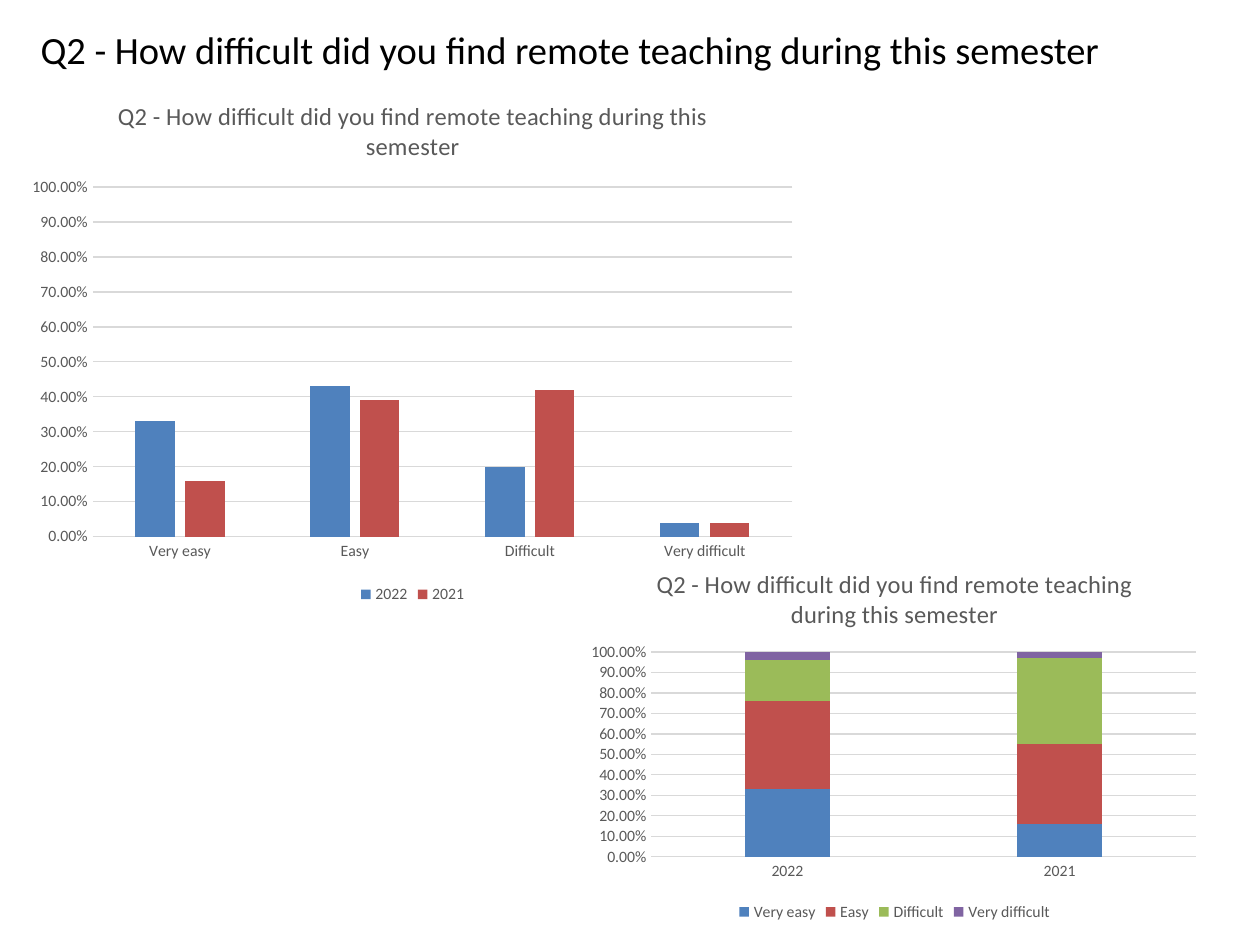
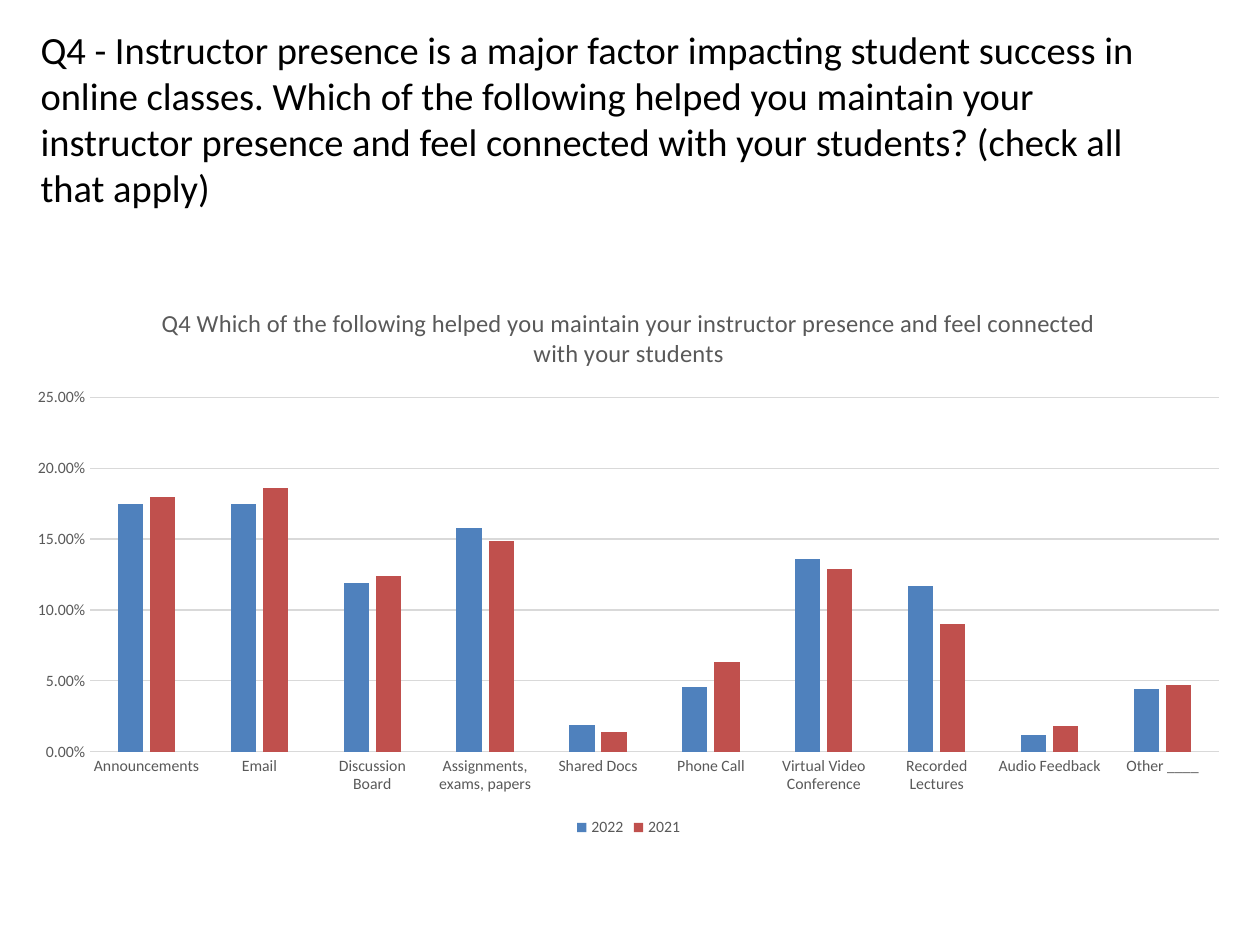
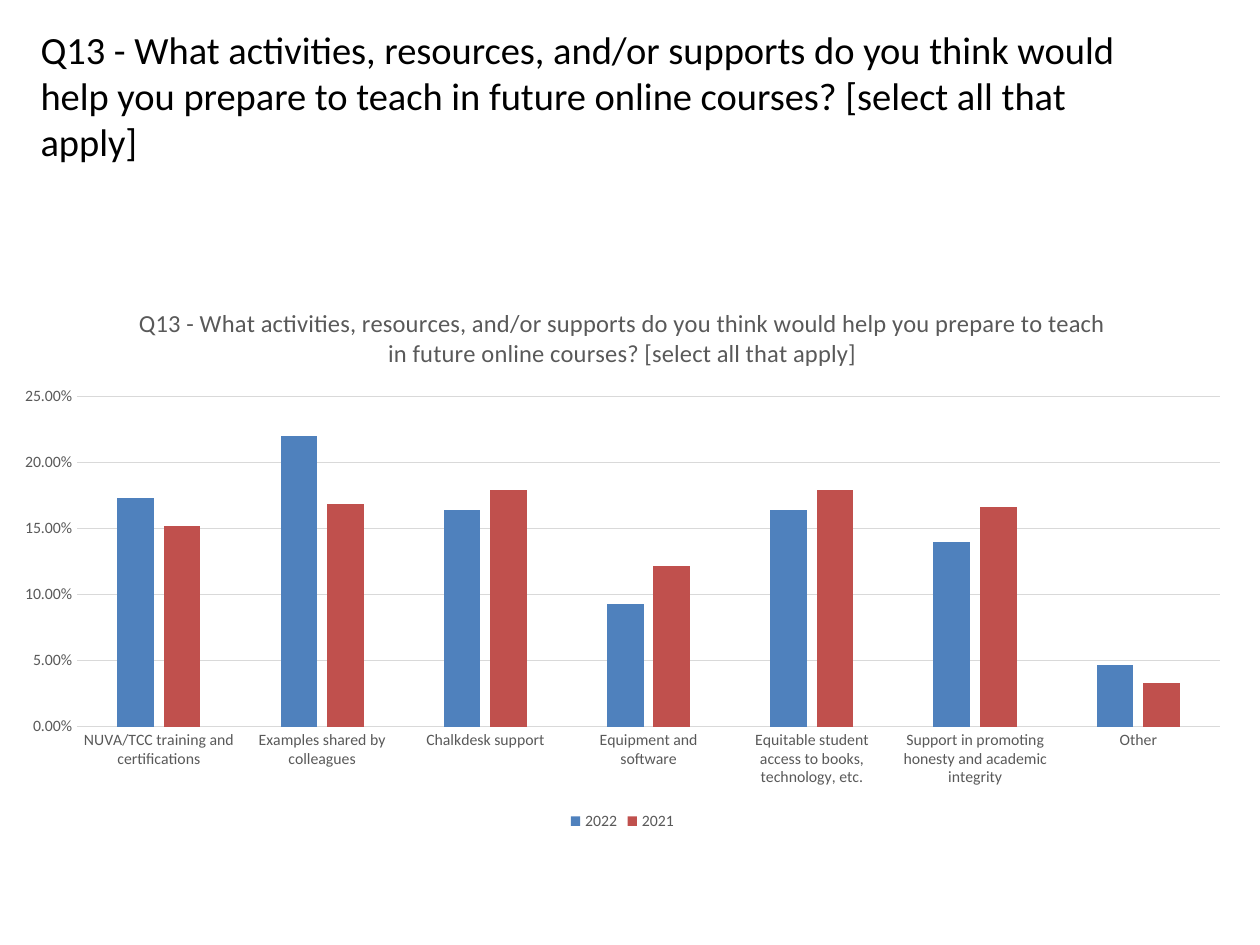
import pptx
import pptx.chart.data
import pptx.dml.color
import pptx.enum.chart
import pptx.enum.text
import pptx.oxml
import pptx.oxml.ns
import pptx.util

Pt = pptx.util.Pt
ChartType = pptx.enum.chart.XL_CHART_TYPE

# Shared style
FONT = "Calibri"
BLACK, GREY, GRID = "000000", "595959", "D9D9D9"
SERIES_COLOURS = ["4F81BD", "C0504D", "9BBB59", "8064A2"]
TITLE_BOX = (16, 11, 648, 29)

# Survey results
DIFFICULTY = "Q2 - How difficult did you find remote teaching during this semester"
DIFFICULTY_LEVELS = ["Very easy", "Easy", "Difficult", "Very difficult"]
DIFFICULTY_RESULTS = {
    "2022": [0.33, 0.43, 0.2, 0.04],
    "2021": [0.16, 0.39, 0.42, 0.04],
}
PRESENCE = (
    "Q4 - Instructor presence is a major factor impacting student success in online classes. "
    "Which of the following helped you maintain your instructor presence and feel connected "
    "with your students? (check all that apply)"
)
PRESENCE_CHART = (
    "Q4 Which of the following helped you maintain your instructor presence "
    "and feel connected with your students"
)
PRESENCE_TOOLS = [
    "Announcements", "Email", "Discussion Board", "Assignments, exams, papers",
    "Shared Docs", "Phone Call", "Virtual Video Conference", "Recorded Lectures",
    "Audio Feedback", "Other ____",
]
PRESENCE_RESULTS = {
    "2022": [0.175, 0.175, 0.119, 0.158, 0.019, 0.046, 0.136, 0.117, 0.012, 0.044],
    "2021": [0.18, 0.186, 0.124, 0.149, 0.014, 0.063, 0.129, 0.09, 0.018, 0.047],
}
SUPPORT = (
    "Q13 - What activities, resources, and/or supports do you think would help you "
    "prepare to teach in future online courses? [select all that apply]"
)
SUPPORT_KINDS = [
    "NUVA/TCC training and certifications", "Examples shared by colleagues",
    "Chalkdesk support", "Equipment and software",
    "Equitable student access to books, technology, etc.",
    "Support in promoting honesty and academic integrity", "Other",
]
SUPPORT_RESULTS = {
    "2022": [0.173, 0.22, 0.164, 0.093, 0.164, 0.14, 0.047],
    "2021": [0.152, 0.169, 0.179, 0.122, 0.179, 0.166, 0.033],
}


def colour(value):
    return pptx.dml.color.RGBColor.from_string(value)


def style_font(font, size, value):
    font.name = FONT
    font.size = Pt(size)
    font.bold = False
    font.color.rgb = colour(value)


def style_line(line, value):
    line.color.rgb = colour(value)
    line.width = Pt(0.75)


def add_question_slide(presentation, question):
    """Add a title-only slide headed by the survey question."""
    slide = presentation.slides.add_slide(presentation.slide_layouts[5])
    title = slide.shapes.title
    title.left, title.top, title.width, title.height = map(Pt, TITLE_BOX)
    text_frame = title.text_frame
    text_frame.text = question
    text_frame.word_wrap = True
    text_frame.auto_size = pptx.enum.text.MSO_AUTO_SIZE.NONE
    text_frame.vertical_anchor = pptx.enum.text.MSO_ANCHOR.TOP
    paragraph = text_frame.paragraphs[0]
    paragraph.alignment = pptx.enum.text.PP_ALIGN.LEFT
    style_font(paragraph.runs[0].font, 22, BLACK)
    return slide


def place_plot(chart, box, plot_box):
    """Fix the inner plot area; plot_box is in points from the chart's corner."""
    width, height = box[2:]
    fractions = [length / side for length, side in zip(plot_box, (width, height) * 2)]
    settings = [("layoutTarget", "inner"), ("xMode", "edge"), ("yMode", "edge")]
    settings += [(name, f"{value:.3f}") for name, value in zip("xywh", fractions)]
    marks = "".join(f'<c:{name} val="{value}"/>' for name, value in settings)
    layout = pptx.oxml.parse_xml(
        f'<c:layout {pptx.oxml.ns.nsdecls("c")}><c:manualLayout>{marks}'
        "</c:manualLayout></c:layout>"
    )
    plot_area = chart.element.xpath("c:chart/c:plotArea")[0]
    for existing in plot_area.xpath("c:layout"):
        plot_area.remove(existing)
    plot_area.insert(0, layout)


def style_axes(chart, maximum, step):
    for axis in (chart.category_axis, chart.value_axis):
        axis.major_tick_mark = pptx.enum.chart.XL_TICK_MARK.NONE
        axis.minor_tick_mark = pptx.enum.chart.XL_TICK_MARK.NONE
        style_font(axis.tick_labels.font, 9, GREY)
    style_line(chart.category_axis.format.line, GRID)
    value_axis = chart.value_axis
    value_axis.format.line.fill.background()
    value_axis.minimum_scale = 0
    value_axis.maximum_scale = maximum
    value_axis.major_unit = step
    value_axis.has_major_gridlines = True
    style_line(value_axis.major_gridlines.format.line, GRID)
    value_axis.tick_labels.number_format = "0.00%"
    value_axis.tick_labels.number_format_is_linked = False


def add_column_chart(slide, box, plot_box, heading, categories, results,
                     maximum, step, chart_type=ChartType.COLUMN_CLUSTERED):
    data = pptx.chart.data.CategoryChartData(number_format="0.00%")
    data.categories = categories
    for name, values in results.items():
        data.add_series(name, values)
    chart = slide.shapes.add_chart(chart_type, *map(Pt, box), data).chart
    style_font(chart.font, 10, BLACK)

    # Heading and legend
    chart.has_title = True
    text_frame = chart.chart_title.text_frame
    text_frame.text = heading
    style_font(text_frame.paragraphs[0].runs[0].font, 14, GREY)
    chart.has_legend = True
    chart.legend.position = pptx.enum.chart.XL_LEGEND_POSITION.BOTTOM
    chart.legend.include_in_layout = False
    style_font(chart.legend.font, 9, GREY)

    # Columns
    plot = chart.plots[0]
    plot.gap_width = 219
    plot.overlap = 100 if chart_type == ChartType.COLUMN_STACKED else -27
    plot.vary_by_categories = False
    for series, value in zip(plot.series, SERIES_COLOURS):
        series.format.fill.solid()
        series.format.fill.fore_color.rgb = colour(value)

    style_axes(chart, maximum, step)
    place_plot(chart, box, plot_box)


def build_difficulty_slide(presentation):
    slide = add_question_slide(presentation, DIFFICULTY)
    add_column_chart(slide, (9.4, 44, 452.9, 303.8), (43.5, 63, 400, 200),
                     DIFFICULTY, DIFFICULTY_LEVELS, DIFFICULTY_RESULTS, 1, 0.1)
    # The same results, stacked by year
    by_level = dict(zip(DIFFICULTY_LEVELS, zip(*DIFFICULTY_RESULTS.values())))
    add_column_chart(slide, (331.2, 313.2, 360, 216), (41, 59.5, 311, 117),
                     DIFFICULTY, list(DIFFICULTY_RESULTS), by_level, 1, 0.1,
                     ChartType.COLUMN_STACKED)


def build_presence_slide(presentation):
    slide = add_question_slide(presentation, PRESENCE)
    add_column_chart(slide, (7.9, 162, 702.7, 319), (43.5, 65, 645, 202.5),
                     PRESENCE_CHART, PRESENCE_TOOLS, PRESENCE_RESULTS, 0.25, 0.05)


def build_support_slide(presentation):
    slide = add_question_slide(presentation, SUPPORT)
    add_column_chart(slide, (0, 162, 711.4, 315.4), (44, 64.5, 653, 188.5),
                     SUPPORT, SUPPORT_KINDS, SUPPORT_RESULTS, 0.25, 0.05)


def main():
    presentation = pptx.Presentation()
    presentation.slide_width = Pt(720)
    presentation.slide_height = Pt(540)
    build_difficulty_slide(presentation)
    build_presence_slide(presentation)
    build_support_slide(presentation)
    presentation.save("out.pptx")


if __name__ == "__main__":
    main()
